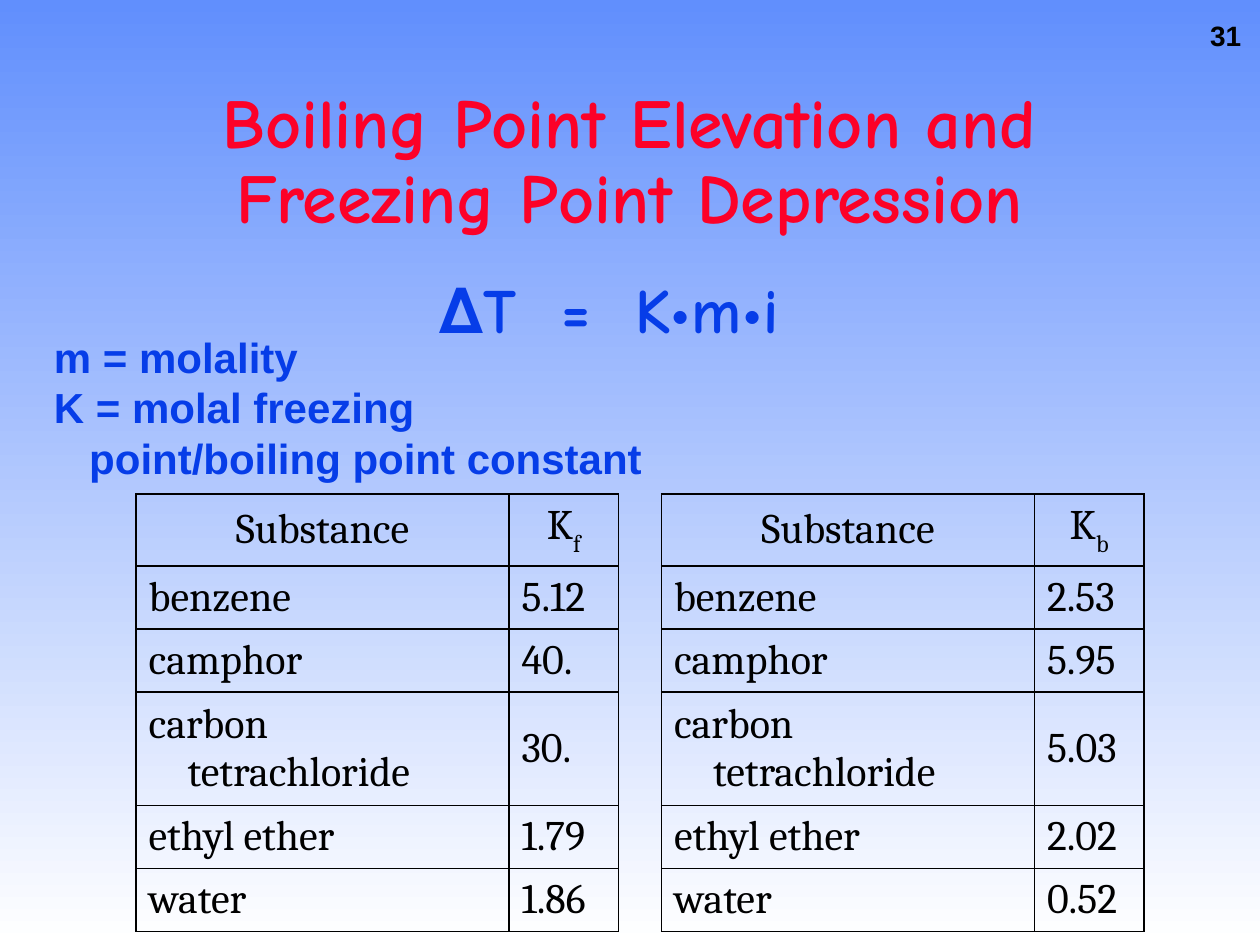
from lxml import etree
from pptx import Presentation
from pptx.dml.color import RGBColor
from pptx.enum.text import MSO_ANCHOR, PP_ALIGN
from pptx.oxml.ns import qn
from pptx.util import Inches, Pt

CENTER, RIGHT = PP_ALIGN.CENTER, PP_ALIGN.RIGHT
MIDDLE = MSO_ANCHOR.MIDDLE
SKY = RGBColor(0x61, 0x8F, 0xFD)
WHITE = RGBColor(0xFF, 0xFF, 0xFF)
RED = RGBColor(0xFC, 0x01, 0x28)
BLUE = RGBColor(0x06, 0x3D, 0xE8)
BLACK = RGBColor(0, 0, 0)

TITLE = "Boiling Point Elevation and Freezing Point Depression"
FORMULA = "∆T  =  K•m•i"
DEFINITIONS = ["m = molality", "K = molal freezing\vpoint/boiling point constant"]
PAGE = "31"
SUBSTANCES = ["benzene", "camphor", "carbon tetrachloride", "ethyl ether", "water"]
# Subscript of K, left edge, header / single-line / double-line row heights, values
CONSTANTS = [
    ("b", 5.25, (0.55, 0.48, 0.87), ["2.53", "5.95", "5.03", "2.02", "0.52"]),
    ("f", 1.08, (0.57, 0.5, 0.9), ["5.12", "40.", "30.", "1.79", "1.86"]),
]
TABLE_TOP = 3.92
COLUMN_WIDTHS = (2.96, 0.87)
HANGING = 0.31


def set_indent(paragraph, left, first=0):
    properties = paragraph._p.get_or_add_pPr()
    properties.set("marL", str(Inches(left)))
    properties.set("indent", str(Inches(first)))


def style(paragraph, size, font, color, bold=True):
    for run in paragraph.runs:
        run.font.size = Pt(size)
        run.font.name = font
        run.font.bold = bold
        run.font.color.rgb = color


def add_text(slide, box, lines, size, font, color, wrap=True):
    frame = slide.shapes.add_textbox(*map(Inches, box)).text_frame
    frame.word_wrap = wrap
    frame.text = "\n".join(lines)
    for paragraph in frame.paragraphs:
        style(paragraph, size, font, color)
    return frame.paragraphs


def add_borders(cell):
    """Draw a thin black line on all four sides of the cell."""
    properties = cell._tc.get_or_add_tcPr()
    for position, side in enumerate(("lnL", "lnR", "lnT", "lnB")):
        line = etree.Element(qn(f"a:{side}"), w=str(Pt(1)))
        fill = etree.SubElement(line, qn("a:solidFill"))
        etree.SubElement(fill, qn("a:srgbClr"), val=str(BLACK))
        properties.insert(position, line)


def fill_cell(cell, text, subscript="", align=None):
    cell.fill.background()
    add_borders(cell)
    cell.vertical_anchor = MIDDLE
    paragraph = cell.text_frame.paragraphs[0]
    paragraph.text = text
    paragraph.alignment = align
    set_indent(paragraph, HANGING, -HANGING)
    if subscript:
        run = paragraph.add_run()
        run.text = subscript
        run._r.get_or_add_rPr().set("baseline", "-30000")
    style(paragraph, 24, "Cambria", BLACK, bold=False)


def add_constants(slide, subscript, left, row_heights, values):
    header, single, double = row_heights
    heights = [header] + [double if " tetra" in name else single for name in SUBSTANCES]
    table = slide.shapes.add_table(
        len(heights), 2, Inches(left), Inches(TABLE_TOP),
        Inches(sum(COLUMN_WIDTHS)), Inches(sum(heights))).table
    table.first_row = table.horz_banding = False
    for column, width in zip(table.columns, COLUMN_WIDTHS):
        column.width = Inches(width)
    for row, height in zip(table.rows, heights):
        row.height = Inches(height)
    fill_cell(table.cell(0, 0), "Substance", align=CENTER)
    fill_cell(table.cell(0, 1), "K", subscript, CENTER)
    for number, pair in enumerate(zip(SUBSTANCES, values), start=1):
        for column, text in enumerate(pair):
            fill_cell(table.cell(number, column), text)


def main():
    deck = Presentation()
    deck.slide_width, deck.slide_height = Inches(10), Inches(7.5)
    slide = deck.slides.add_slide(deck.slide_layouts[5])

    background = slide.background.fill
    background.gradient()
    background.gradient_angle = 270
    for stop, color, position in zip(background.gradient_stops, (SKY, WHITE), (0, 1)):
        stop.color.rgb = color
        stop.position = position

    title = slide.shapes.title
    title.left, title.top, title.width, title.height = map(Inches, (1.08, 0.67, 7.83, 1.25))
    title.text_frame.text = TITLE
    title.text_frame.vertical_anchor = MIDDLE
    heading = title.text_frame.paragraphs[0]
    heading.alignment = CENTER
    heading.line_spacing = 0.9
    style(heading, 40, "Comic Neue", RED)

    page, = add_text(slide, (9.48, 0.1, 0.47, 0.36), [PAGE], 16, "Arial", BLACK, wrap=False)
    page.alignment = RIGHT

    formula, = add_text(slide, (1.08, 2.17, 8.33, 0.5), [FORMULA], 36, "Comic Neue", BLUE)
    formula.line_spacing = 0.9
    set_indent(formula, 2.31)

    definitions = add_text(slide, (0.33, 2.58, 4.99, 1.3), DEFINITIONS, 24, "Arial", BLUE)
    set_indent(definitions[1], 0.28, -0.28)

    for constant in CONSTANTS:
        add_constants(slide, *constant)
    deck.save("out.pptx")


if __name__ == "__main__":
    main()
